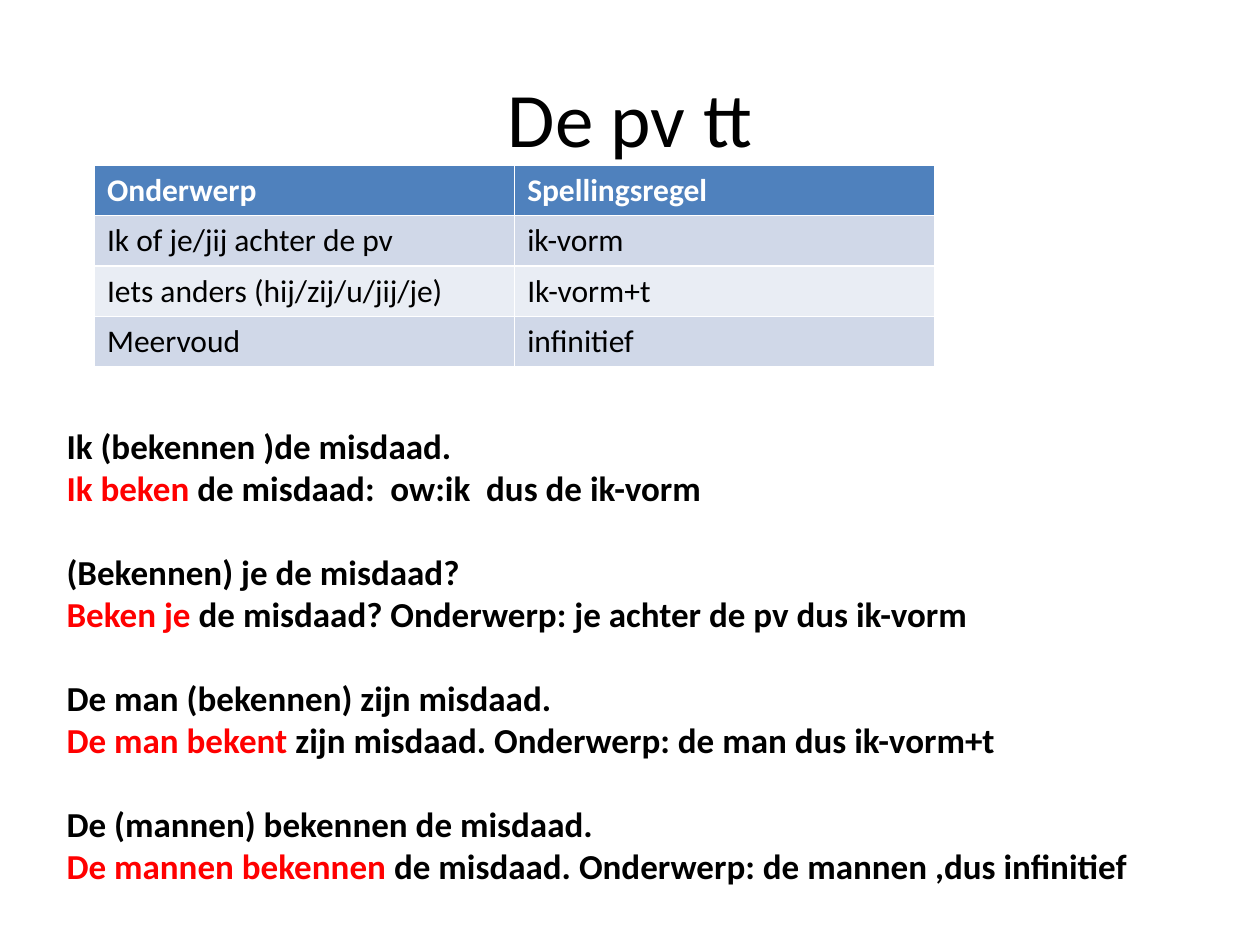
from pptx import Presentation
from pptx.dml.color import RGBColor
from pptx.enum.text import MSO_ANCHOR, PP_ALIGN
from pptx.util import Inches, Pt

MIDDLE = MSO_ANCHOR.MIDDLE
TOP = MSO_ANCHOR.TOP
CENTER = PP_ALIGN.CENTER

BLACK = RGBColor(0x00, 0x00, 0x00)
WHITE = RGBColor(0xFF, 0xFF, 0xFF)
RED = RGBColor(0xFF, 0x00, 0x00)
HEADER_BLUE = RGBColor(0x4F, 0x81, 0xBD)
BANDS = (RGBColor(0xE9, 0xED, 0xF4), RGBColor(0xD0, 0xD8, 0xE8))

TITLE_FORMAT = {"name": "Calibri", "size": Pt(44), "bold": False}
EXAMPLE_FORMAT = {"name": "Calibri", "size": Pt(20), "bold": True}
HEADER_FORMAT = {"name": "Calibri", "size": Pt(18), "bold": True}
RULE_FORMAT = {**HEADER_FORMAT, "bold": False}

RULES = [
    ("Onderwerp", "Spellingsregel"),
    ("Ik of je/jij achter de pv", "ik-vorm"),
    ("Iets anders (hij/zij/u/jij/je)", "Ik-vorm+t"),
    ("Meervoud", "infinitief"),
]

# Exercise, answer in red, explanation
EXAMPLES = [
    ("Ik (bekennen )de misdaad.",
     "Ik beken ", "de misdaad:  ow:ik  dus de ik-vorm"),
    ("(Bekennen) je de misdaad?",
     "Beken je ", "de misdaad? Onderwerp: je achter de pv dus ik-vorm"),
    ("De man (bekennen) zijn misdaad.",
     "De man bekent ", "zijn misdaad. Onderwerp: de man dus ik-vorm+t"),
    ("De (mannen) bekennen de misdaad.",
     "De mannen bekennen ", "de misdaad. Onderwerp: de mannen ,dus infinitief"),
]


def add_run(paragraph, text, font_format, color):
    run = paragraph.add_run()
    run.text = text
    for attribute, value in font_format.items():
        setattr(run.font, attribute, value)
    run.font.color.rgb = color


def add_text_frame(slide, left, top, width, height, anchor):
    box = slide.shapes.add_textbox(
        Inches(left), Inches(top), Inches(width), Inches(height))
    frame = box.text_frame
    frame.word_wrap = True
    frame.vertical_anchor = anchor
    return frame


def add_title(slide):
    paragraph = add_text_frame(slide, 0.5, 0.3, 9, 1.25, MIDDLE).paragraphs[0]
    paragraph.alignment = CENTER
    add_run(paragraph, "De pv tt", TITLE_FORMAT, BLACK)


def add_examples(slide):
    frame = add_text_frame(slide, 0.43, 3.32, 8.66, 3.8, TOP)
    for index, (exercise, answer, explanation) in enumerate(EXAMPLES):
        question = frame.add_paragraph() if index else frame.paragraphs[0]
        if index:
            question.space_before = Pt(24)
        add_run(question, exercise, EXAMPLE_FORMAT, BLACK)
        solution = frame.add_paragraph()
        add_run(solution, answer, EXAMPLE_FORMAT, RED)
        add_run(solution, explanation, EXAMPLE_FORMAT, BLACK)


def add_rule_table(slide):
    # The default table style supplies the white cell borders
    table = slide.shapes.add_table(
        len(RULES), len(RULES[0]),
        Inches(0.75), Inches(1.31), Inches(6.67), Inches(1.6)).table
    for row, rule in enumerate(RULES):
        is_header = row == 0
        fill_color = HEADER_BLUE if is_header else BANDS[row % 2]
        font_format = HEADER_FORMAT if is_header else RULE_FORMAT
        text_color = WHITE if is_header else BLACK
        for column, text in enumerate(rule):
            cell = table.cell(row, column)
            cell.fill.solid()
            cell.fill.fore_color.rgb = fill_color
            add_run(cell.text_frame.paragraphs[0], text, font_format, text_color)


def main():
    presentation = Presentation()
    presentation.slide_width = Inches(10)
    presentation.slide_height = Inches(7.5)
    slide = presentation.slides.add_slide(presentation.slide_layouts[6])

    add_title(slide)
    add_examples(slide)
    add_rule_table(slide)

    presentation.save("out.pptx")


if __name__ == "__main__":
    main()
